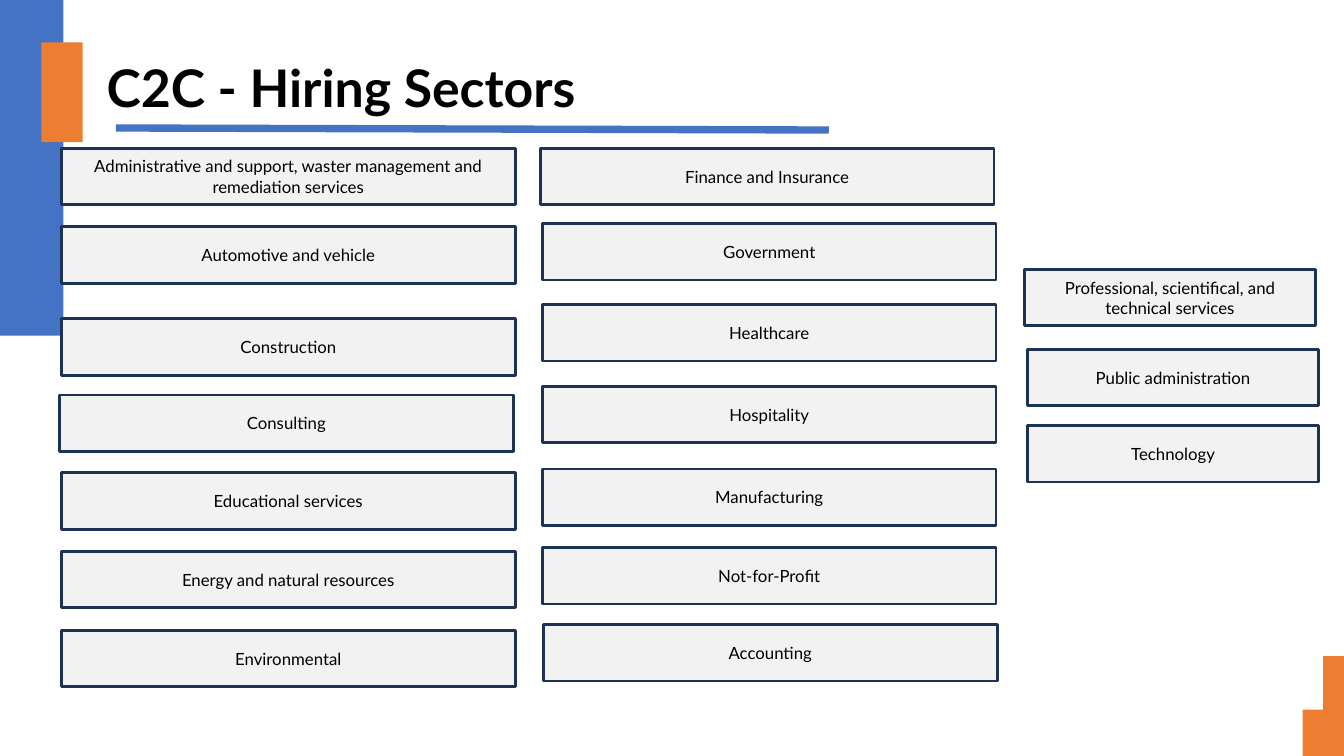
from dataclasses import dataclass

from lxml.etree import SubElement
from pptx import Presentation
from pptx.dml.color import RGBColor
from pptx.enum.shapes import MSO_CONNECTOR, MSO_SHAPE
from pptx.enum.text import MSO_ANCHOR, PP_ALIGN
from pptx.oxml.ns import qn
from pptx.util import Inches, Pt

TITLE = "C2C - Hiring Sectors"

# (sector, row on the grid, sideways shift)
COLUMNS = [
    {"left": 0.61, "width": 4.5, "sectors": [
        ("Administrative and support, waster management and remediation services", 0, 0),
        ("Automotive and vehicle", 1, 0),
        ("Construction", 2.17, 0),
        ("Consulting", 3.14, -0.02),
        ("Educational services", 4.13, 0),
        ("Energy and natural resources", 5.13, 0),
        ("Environmental", 6.13, 0),
    ]},
    {"left": 5.38, "width": 4.5, "sectors": [
        ("Finance and Insurance", 0, -0.02),
        ("Government", 0.96, 0),
        ("Healthcare", 1.99, 0),
        ("Hospitality", 3.03, 0),
        ("Manufacturing", 4.08, 0),
        ("Not-for-Profit", 5.08, 0),
        ("Accounting", 6.06, 0.01),
    ]},
    {"left": 10.19, "width": 2.89, "sectors": [
        ("Professional, scientifical, and technical services", 1.54, -0.03),
        ("Public administration", 2.56, 0),
        ("Technology", 3.53, 0),
    ]},
]


@dataclass(frozen=True)
class Theme:
    font: str = "Lato"
    title_size: float = 37
    label_size: float = 12
    text: str = "000000"
    blue: str = "4472C4"
    orange: str = "ED7D31"
    paper: str = "FFFFFF"
    card: str = "F2F2F2"
    border: str = "1E3256"
    border_width: float = 2
    rule_width: float = 5.25


THEME = Theme()
WIDTH, HEIGHT = 13.33, 7.5
FIRST_ROW, ROW_PITCH, CARD_HEIGHT = 1.47, 0.78, 0.56
BAND_WIDTH, BAND_HEIGHT = 0.41, 0.99

DECORATIONS = [
    (0, 0, 0.63, 3.33, THEME.blue),
    (BAND_WIDTH, 0.42, BAND_WIDTH, BAND_HEIGHT, THEME.orange),
    (WIDTH - BAND_WIDTH, HEIGHT - BAND_HEIGHT, BAND_WIDTH, BAND_HEIGHT, THEME.orange),
    (12.71, 3.91, BAND_WIDTH, 3.13, THEME.paper),
]


def color(value):
    return RGBColor.from_string(value)


def write(box, text, size, bold=False, align=PP_ALIGN.LEFT,
          anchor=MSO_ANCHOR.TOP, spacing=1.0):
    frame = box.text_frame
    frame.word_wrap = True
    frame.vertical_anchor = anchor
    para = frame.paragraphs[0]
    para.alignment = align
    para.line_spacing = spacing
    span = para.add_run()
    span.text = text
    span.font.name = THEME.font
    span.font.size = Pt(size)
    span.font.bold = bold
    span.font.color.rgb = color(THEME.text)


def add_block(page, left, top, width, height, fill, border=None):
    box = page.shapes.add_shape(
        MSO_SHAPE.RECTANGLE, Inches(left), Inches(top), Inches(width), Inches(height))
    box.shadow.inherit = False
    box.fill.solid()
    box.fill.fore_color.rgb = color(fill)
    if border:
        box.line.color.rgb = color(border)
        box.line.width = Pt(THEME.border_width)
    else:
        box.line.fill.background()
    return box


def add_rule(page, start, end):
    rule = page.shapes.add_connector(
        MSO_CONNECTOR.STRAIGHT, *(Inches(value) for value in start + end))
    rule.line.color.rgb = color(THEME.blue)
    rule.line.width = Pt(THEME.rule_width)
    SubElement(rule.element.spPr, qn("a:effectLst"))


def main():
    deck = Presentation()
    deck.slide_width, deck.slide_height = Inches(WIDTH), Inches(HEIGHT)
    page = deck.slides.add_slide(deck.slide_layouts[6])

    for decoration in DECORATIONS:
        add_block(page, *decoration)

    title = page.shapes.add_textbox(Inches(0.96), Inches(0.57), Inches(8.91), Inches(0.84))
    write(title, TITLE, THEME.title_size, bold=True, spacing=0.9)

    for column in COLUMNS:
        for sector, row, shift in column["sectors"]:
            card = add_block(
                page, column["left"] + shift, FIRST_ROW + row * ROW_PITCH,
                column["width"], CARD_HEIGHT, THEME.card, border=THEME.border)
            write(card, sector, THEME.label_size,
                  align=PP_ALIGN.CENTER, anchor=MSO_ANCHOR.MIDDLE)

    add_rule(page, (1.15, 1.27), (8.22, 1.29))
    deck.save("out.pptx")


if __name__ == "__main__":
    main()
